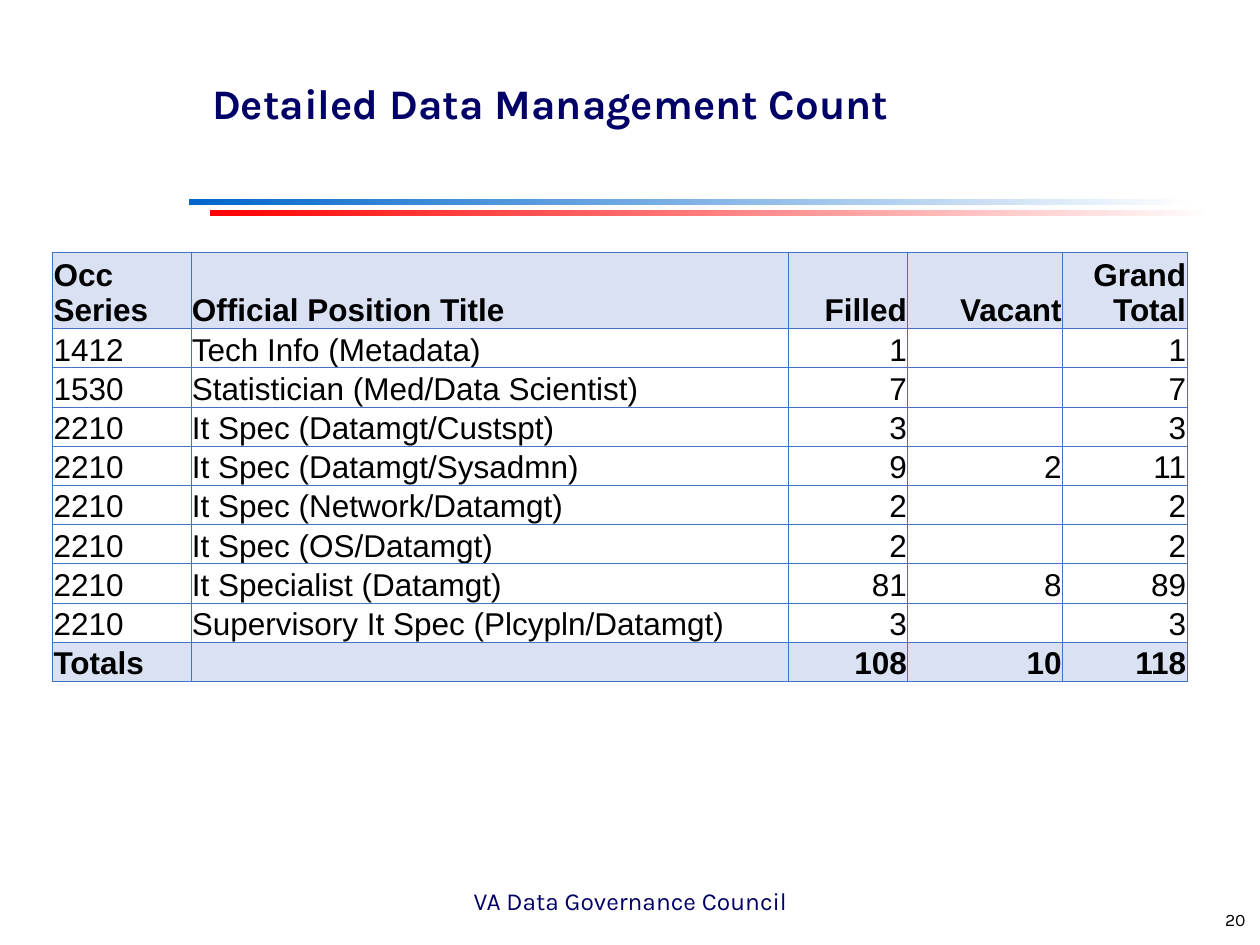
from dataclasses import dataclass

from lxml import etree
from pptx import Presentation
from pptx.dml.color import RGBColor
from pptx.enum.shapes import MSO_SHAPE
from pptx.enum.text import MSO_ANCHOR, MSO_AUTO_SIZE, PP_ALIGN
from pptx.oxml.ns import qn
from pptx.util import Cm, Pt

RECT = MSO_SHAPE.RECTANGLE
MIDDLE, BOTTOM = MSO_ANCHOR.MIDDLE, MSO_ANCHOR.BOTTOM
LEFT, CENTER, RIGHT = PP_ALIGN.LEFT, PP_ALIGN.CENTER, PP_ALIGN.RIGHT
NO_FIT = MSO_AUTO_SIZE.NONE
TITLE_ONLY = 5


@dataclass(frozen=True)
class Theme:
    heading_font: str = "Karla"
    table_font: str = "Arial"
    navy: str = "000066"
    black: str = "000000"
    white: str = "FFFFFF"
    blue: str = "0066CC"
    red: str = "FF0000"
    band: str = "D9E1F2"
    border: str = "4472C4"
    title_size: int = 24
    table_size: int = 18
    footer_size: int = 14
    number_size: int = 10
    border_width: float = 0.5


def set_attrs(obj, **values):
    for name, value in values.items():
        setattr(obj, name, value)


class SlideBuilder:
    def __init__(self, prs, theme):
        self.theme = theme
        self.slide = prs.slides.add_slide(prs.slide_layouts[TITLE_ONLY])

    def fill_text(self, tf, text, align, font, size, color, bold=False):
        p = tf.paragraphs[0]
        p.alignment = align
        if not text:
            p._p.get_or_add_endParaRPr().set("sz", str(size * 100))
            return
        r = p.add_run()
        r.text = text
        set_attrs(r.font, name=font, size=Pt(size), bold=bold)
        r.font.color.rgb = RGBColor.from_string(color)

    def title(self, text, left, top, width, height):
        t = self.theme
        sp = self.slide.shapes.title
        set_attrs(sp, left=Cm(left), top=Cm(top), width=Cm(width), height=Cm(height))
        set_attrs(sp.text_frame, word_wrap=True, auto_size=NO_FIT, vertical_anchor=MIDDLE)
        self.fill_text(sp.text_frame, text, LEFT, t.heading_font, t.title_size, t.navy, True)

    def text(self, text, left, top, width, height, align, size, color):
        sp = self.slide.shapes.add_textbox(Cm(left), Cm(top), Cm(width), Cm(height))
        set_attrs(sp.text_frame, word_wrap=True, vertical_anchor=MIDDLE)
        self.fill_text(sp.text_frame, text, align, self.theme.heading_font, size, color)

    def fading_bar(self, left, top, width, height, color):
        sp = self.slide.shapes.add_shape(RECT, Cm(left), Cm(top), Cm(width), Cm(height))
        sp.shadow.inherit = False
        sp.line.fill.background()
        sp.fill.gradient()
        sp.fill.gradient_angle = 0
        for stop, stop_color in zip(sp.fill.gradient_stops, (color, self.theme.white)):
            stop.color.rgb = RGBColor.from_string(stop_color)

    def cell_borders(self, cell):
        tc_pr = cell._tc.get_or_add_tcPr()
        for i, side in enumerate(("lnL", "lnR", "lnT", "lnB")):
            ln = etree.Element(qn(f"a:{side}"), w=str(int(Pt(self.theme.border_width))))
            fill = etree.SubElement(ln, qn("a:solidFill"))
            etree.SubElement(fill, qn("a:srgbClr"), val=self.theme.border)
            tc_pr.insert(i, ln)

    def table(self, rows, left, top, col_widths, header_height, row_height):
        t = self.theme
        heights = [header_height] + [row_height] * (len(rows) - 1)
        frame = self.slide.shapes.add_table(
            len(rows), len(col_widths), Cm(left), Cm(top),
            Cm(sum(col_widths)), Cm(sum(heights)))
        table = frame.table
        set_attrs(table, first_row=False, horz_banding=False)
        for column, width in zip(table.columns, col_widths):
            column.width = Cm(width)
        for i, values in enumerate(rows):
            table.rows[i].height = Cm(heights[i])
            strong = i in (0, len(rows) - 1)
            for j, value in enumerate(values):
                cell = table.cell(i, j)
                set_attrs(cell, vertical_anchor=BOTTOM, margin_left=Cm(0.02),
                          margin_right=Cm(0.02), margin_top=Cm(0.02), margin_bottom=0)
                cell.fill.solid()
                cell.fill.fore_color.rgb = RGBColor.from_string(t.band if strong else t.white)
                self.cell_borders(cell)
                self.fill_text(cell.text_frame, value, LEFT if j < 2 else RIGHT,
                               t.table_font, t.table_size, t.black, strong)


POSITIONS = [
    ("Occ Series", "Official Position Title", "Filled", "Vacant", "Grand Total"),
    ("1412", "Tech Info (Metadata)", "1", "", "1"),
    ("1530", "Statistician (Med/Data Scientist)", "7", "", "7"),
    ("2210", "It Spec (Datamgt/Custspt)", "3", "", "3"),
    ("2210", "It Spec (Datamgt/Sysadmn)", "9", "2", "11"),
    ("2210", "It Spec (Network/Datamgt)", "2", "", "2"),
    ("2210", "It Spec (OS/Datamgt)", "2", "", "2"),
    ("2210", "It Specialist (Datamgt)", "81", "8", "89"),
    ("2210", "Supervisory It Spec (Plcypln/Datamgt)", "3", "", "3"),
    ("Totals", "", "108", "10", "118"),
]


def main():
    prs = Presentation()
    set_attrs(prs, slide_width=Cm(25.4), slide_height=Cm(19.05))
    theme = Theme()
    s = SlideBuilder(prs, theme)
    s.fading_bar(3.81, 4.01, 20.32, 0.13, theme.blue)
    s.fading_bar(4.23, 4.23, 20.32, 0.13, theme.red)
    s.title("Detailed Data Management Count", 4.02, 0, 21.38, 4.14)
    s.text("20", 19.43, 18.03, 5.93, 1.02, RIGHT, theme.number_size, theme.black)
    s.text("VA Data Governance Council", 8.68, 17.65, 8.06, 1.02, CENTER,
           theme.footer_size, theme.navy)
    s.table(POSITIONS, 1.06, 5.08, [2.79, 12.04, 2.41, 3.12, 2.51], 1.43, 0.79)
    prs.save("out.pptx")


if __name__ == "__main__":
    main()
